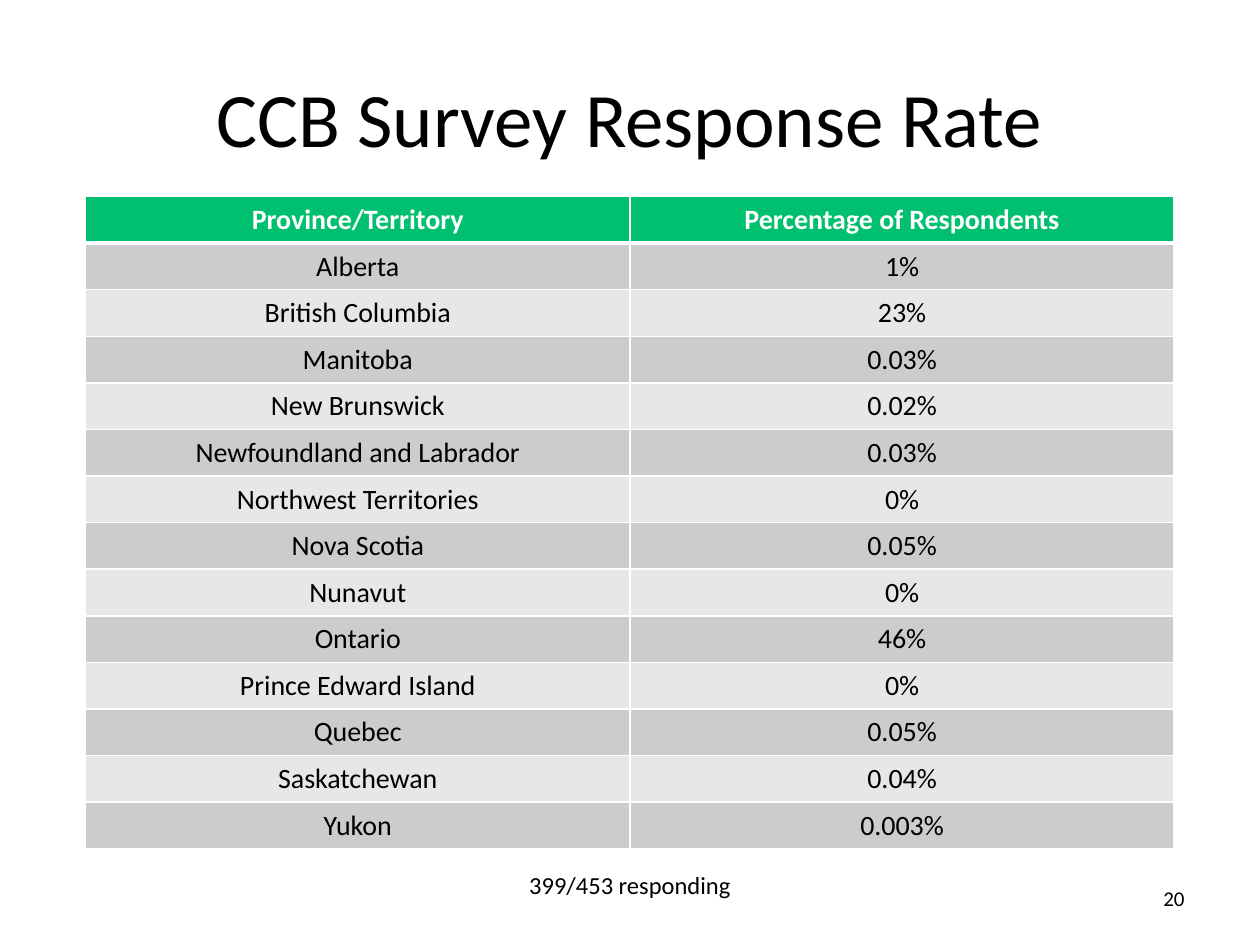
from lxml import etree
from pptx import Presentation, util as u
from pptx.dml.color import RGBColor
from pptx.enum import text
from pptx.oxml.ns import qn

TITLE = "CCB Survey Response Rate"
HEAD = ("Province/Territory", "Percentage of Respondents")
RATES = [
    ("Alberta", "1%"),
    ("British Columbia", "23%"),
    ("Manitoba", "0.03%"),
    ("New Brunswick", "0.02%"),
    ("Newfoundland and Labrador", "0.03%"),
    ("Northwest Territories", "0%"),
    ("Nova Scotia", "0.05%"),
    ("Nunavut", "0%"),
    ("Ontario", "46%"),
    ("Prince Edward Island", "0%"),
    ("Quebec", "0.05%"),
    ("Saskatchewan", "0.04%"),
    ("Yukon", "0.003%"),
]
NOTE = "399/453 responding"
PAGE = "20"

THEME = {
    "font": "Calibri", "ink": "000000", "white": "FFFFFF",
    "head": "00BF6F", "bands": ("CCCCCC", "E7E7E7"),
    "title": 44, "cell": 16, "note": 14, "page": 12,
    "line": 1, "rule": 3,
}
WIDE, HIGH = 10, 7.5
LEFT, TOP, SPAN, ROW = 0.68, 1.56, 8.64, 0.37

MID, RIGHT = text.PP_ALIGN.CENTER, text.PP_ALIGN.RIGHT


def write(frame, words, size, color="ink", align=MID, bold=False):
    para = frame.paragraphs[0]
    para.alignment = align
    run = para.add_run()
    run.text = words
    form = {"name": THEME["font"], "size": u.Pt(THEME[size]), "bold": bold}
    for key, val in form.items():
        setattr(run.font, key, val)
    run.font.color.rgb = RGBColor.from_string(THEME[color])


def label(slide, box, words, size, anchor, align=MID, wrap=True):
    frame = slide.shapes.add_textbox(*map(u.Inches, box)).text_frame
    frame.word_wrap = wrap
    frame.vertical_anchor = anchor
    write(frame, words, size, align=align)


def edge(cell, low):
    """Draw white borders round a cell, the lower one `low` points wide."""
    props = cell._tc.get_or_add_tcPr()
    widths = {"lnL": THEME["line"], "lnR": THEME["line"],
              "lnT": THEME["line"], "lnB": low}
    for spot, (tag, width) in enumerate(widths.items()):
        line = etree.Element(qn("a:" + tag), w=str(u.Pt(width)))
        fill = etree.SubElement(line, qn("a:solidFill"))
        etree.SubElement(fill, qn("a:srgbClr"), val=THEME["white"])
        props.insert(spot, line)


def grid(slide):
    rows = [HEAD, *RATES]
    box = (LEFT, TOP, SPAN, ROW * len(rows))
    table = slide.shapes.add_table(
        len(rows), len(HEAD), *map(u.Inches, box)).table
    for r, row in enumerate(rows):
        top = r == 0
        shade = THEME["head"] if top else THEME["bands"][(r - 1) % 2]
        low = THEME["rule"] if r < 1 else THEME["line"]
        for c, words in enumerate(row):
            cell = table.cell(r, c)
            cell.fill.solid()
            cell.fill.fore_color.rgb = RGBColor.from_string(shade)
            edge(cell, low)
            write(cell.text_frame, words, "cell",
                  "white" if top else "ink", bold=top)
        if r == 1:
            for cell in table.rows[r].cells:
                cell._tc.tcPr.find(qn("a:lnT")).set(
                    "w", str(u.Pt(THEME["rule"])))


def main():
    deck = Presentation()
    deck.slide_width, deck.slide_height = u.Inches(WIDE), u.Inches(HIGH)
    slide = deck.slides.add_slide(deck.slide_layouts[6])
    mid, top = text.MSO_ANCHOR.MIDDLE, text.MSO_ANCHOR.TOP
    label(slide, (0.5, 0.3, WIDE - 1, 1.25), TITLE, "title", mid)
    grid(slide)
    label(slide, (4.09, 6.86, 1.82, 0.34), NOTE, "note", top, wrap=False)
    label(slide, (7.7, 6.93, 1.8, 0.4), PAGE, "page", mid, RIGHT)
    deck.save("out.pptx")


if __name__ == "__main__":
    main()
